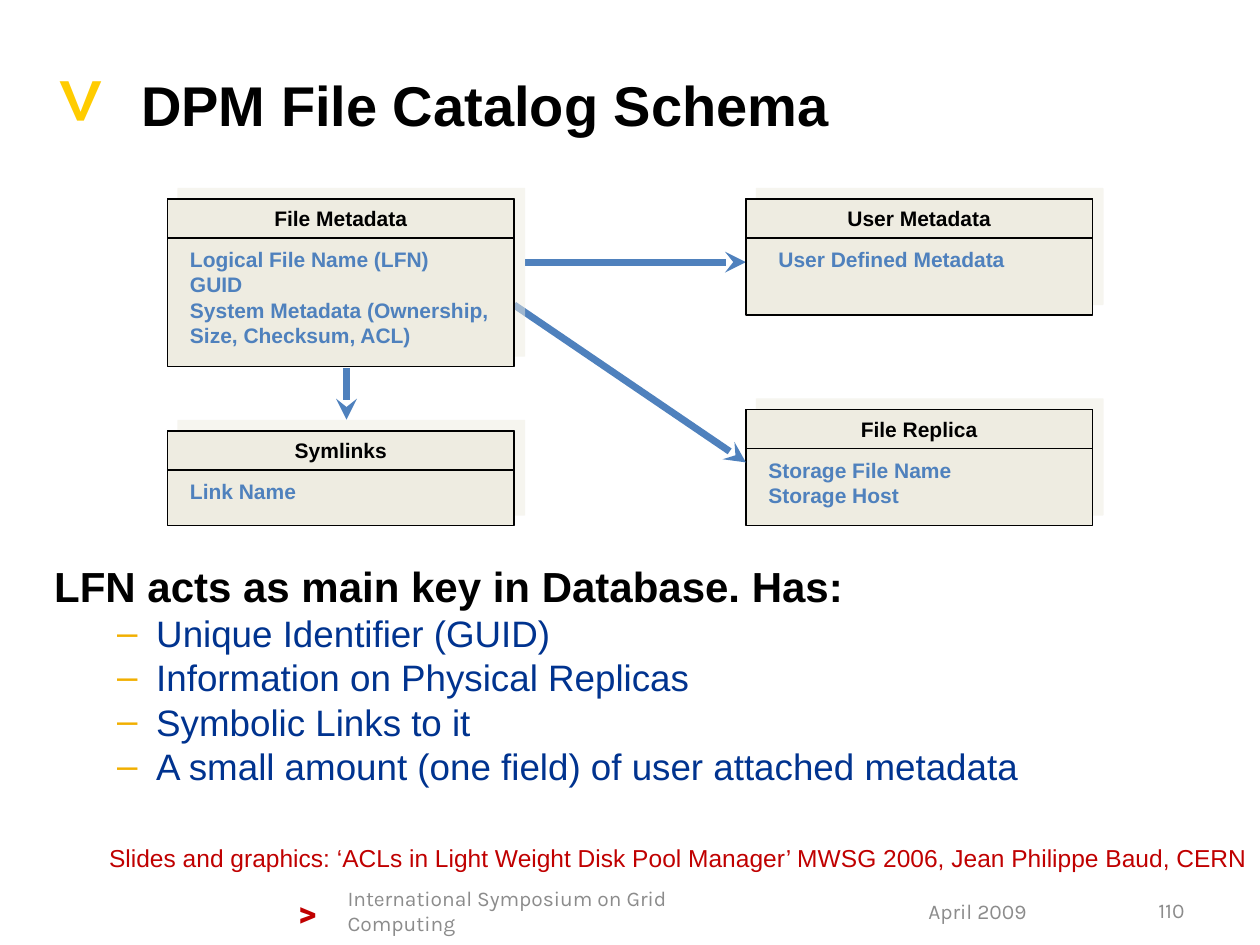
from dataclasses import dataclass

from lxml import etree
from pptx import Presentation
from pptx.dml.color import RGBColor
from pptx.enum.shapes import MSO_CONNECTOR, MSO_SHAPE
from pptx.enum.text import MSO_ANCHOR, MSO_AUTO_SIZE, PP_ALIGN
from pptx.oxml import parse_xml
from pptx.oxml.ns import nsdecls, qn
from pptx.util import Inches, Pt

LEFT, CENTER, RIGHT = PP_ALIGN.LEFT, PP_ALIGN.CENTER, PP_ALIGN.RIGHT
TOP, MIDDLE = MSO_ANCHOR.TOP, MSO_ANCHOR.MIDDLE
RECTANGLE = MSO_SHAPE.RECTANGLE
STRAIGHT = MSO_CONNECTOR.STRAIGHT
NO_AUTOFIT = MSO_AUTO_SIZE.NONE


@dataclass(frozen=True)
class Theme:
    font: str = "Arial"
    mark_font: str = "Roboto"
    footer_font: str = "Karla"
    black: str = "000000"
    card: str = "EEECE1"
    accent: str = "4F81BD"
    red: str = "C00000"
    yellow: str = "FFCC00"
    bullet: str = "F1AF00"
    navy: str = "00338F"
    gray: str = "8C8C8C"
    title_size: int = 32
    lead_size: int = 24
    item_size: int = 21
    credit_size: int = 14
    small_size: int = 12
    title_mark_size: int = 54
    footer_mark_size: int = 20


THEME = Theme()

TITLE = "DPM File Catalog Schema"
LEAD = "LFN acts as main key in Database. Has:"
ITEMS = [
    "Unique Identifier (GUID)",
    "Information on Physical Replicas",
    "Symbolic Links to it",
    "A small amount (one field) of user attached metadata",
]
CREDIT = ("Slides and graphics: ‘ACLs in Light Weight Disk Pool Manager’ "
          "MWSG 2006, Jean Philippe Baud, CERN")

COLUMNS = (1.33, 5.92)
CARD_WIDTH, HEADER_HEIGHT, FIELD_TOP = 2.75, 0.31, 0.33
# name, column, top, height, field indent, field width, fields
REPLICA_CARD = ("File Replica", 1, 3.25, 0.92, 0.08, 1.65,
                ["Storage File Name", "Storage Host"])
OTHER_CARDS = [
    ("Symlinks", 0, 3.42, 0.75, 0.08, 1.04, ["Link Name"]),
    ("File Metadata", 0, 1.58, 1.33, 0.08, 2.57,
     ["Logical File Name (LFN)", "GUID",
      "System Metadata (Ownership,", "Size, Checksum, ACL)"]),
    ("User Metadata", 1, 1.58, 0.92, 0.16, 1.99, ["User Defined Metadata"]),
]
ARROWS = [
    (4.17, 2.08, 5.92, 2.08),
    (2.75, 2.92, 2.75, 3.33),
    (4.08, 2.42, 5.92, 3.67),
]
FOOTERS = [
    ("110", (8.98, 7.11, 0.52, 0.23), RIGHT),
    ("April 2009", (7.27, 7.11, 1.17, 0.24), LEFT),
    ("International Symposium on Grid Computing", (2.66, 7.11, 3.59, 0.24), LEFT),
]


def color(value):
    return RGBColor.from_string(value)


def inches(values):
    return [Inches(value) for value in values]


def write(paragraph, text, size, tint, bold=False, font=THEME.font, align=LEFT):
    paragraph.alignment = align
    run = paragraph.add_run()
    run.text = text
    run.font.name, run.font.size, run.font.bold = font, Pt(size), bold
    run.font.color.rgb = color(tint)


def add_text(slide, text, box, size, tint, anchor=TOP, **style):
    shape = slide.shapes.add_textbox(*inches(box))
    frame = shape.text_frame
    frame.word_wrap, frame.vertical_anchor = True, anchor
    write(frame.paragraphs[0], text, size, tint, **style)
    return shape


def place(placeholder, box, anchor):
    placeholder.left, placeholder.top, placeholder.width, placeholder.height = inches(box)
    frame = placeholder.text_frame
    frame.auto_size, frame.vertical_anchor = NO_AUTOFIT, anchor
    return frame


def add_panel(slide, box):
    panel = slide.shapes.add_shape(RECTANGLE, *inches(box))
    panel.shadow.inherit = False
    panel.fill.solid()
    panel.fill.fore_color.rgb = color(THEME.card)
    panel.line.color.rgb = color(THEME.black)
    panel.line.width = Pt(0.75)
    return panel


def add_card_shadow(panel):
    effects = panel._element.spPr.find(qn("a:effectLst"))
    effects.append(parse_xml(
        f'<a:outerShdw {nsdecls("a")} dist="{Pt(8.5)}" dir="{315 * 60000}" '
        f'algn="ctr" rotWithShape="0"><a:srgbClr val="{THEME.card}">'
        '<a:alpha val="50000"/></a:srgbClr></a:outerShdw>'))


def add_card(slide, name, column, top, height, indent, field_width, fields):
    left = COLUMNS[column]
    add_card_shadow(add_panel(slide, (left, top, CARD_WIDTH, height)))
    header = add_panel(slide, (left, top, CARD_WIDTH, HEADER_HEIGHT))
    write(header.text_frame.paragraphs[0], name, THEME.small_size, THEME.black,
          bold=True, align=CENTER)
    field_box = slide.shapes.add_textbox(*inches(
        (left + indent, top + FIELD_TOP, field_width, 0.1 + 0.2 * len(fields))))
    field_box.fill.solid()
    field_box.fill.fore_color.rgb = color(THEME.card)
    frame = field_box.text_frame
    frame.word_wrap, frame.margin_right = True, 0
    for index, field in enumerate(fields):
        paragraph = frame.add_paragraph() if index else frame.paragraphs[0]
        write(paragraph, field, THEME.small_size, THEME.accent, bold=True)


def add_arrow(slide, ends):
    arrow = slide.shapes.add_connector(STRAIGHT, *inches(ends))
    arrow.line.color.rgb = color(THEME.accent)
    arrow.line.width = Pt(4)
    etree.SubElement(arrow.line._get_or_add_ln(), qn("a:tailEnd"), type="stealth")
    etree.SubElement(arrow._element.spPr, qn("a:effectLst"))


def set_bullet(paragraph, margin, hanging, symbol=None):
    properties = paragraph._p.get_or_add_pPr()
    properties.set("marL", str(Inches(margin)))
    properties.set("indent", str(Inches(-hanging)))
    if symbol is None:
        etree.SubElement(properties, qn("a:buNone"))
        return
    tint = etree.SubElement(properties, qn("a:buClr"))
    etree.SubElement(tint, qn("a:srgbClr"), val=THEME.bullet)
    etree.SubElement(properties, qn("a:buFont"), typeface=THEME.font)
    etree.SubElement(properties, qn("a:buChar"), char=symbol)


def fill_body(frame):
    lead = frame.paragraphs[0]
    set_bullet(lead, 0.38, 0.38)
    lead.space_before = Pt(0)
    write(lead, LEAD, THEME.lead_size, THEME.black, bold=True)
    for item in ITEMS:
        paragraph = frame.add_paragraph()
        paragraph.level = 1
        set_bullet(paragraph, 0.81, 0.31, "–")
        paragraph.space_before = Pt(0)
        write(paragraph, item, THEME.item_size, THEME.navy)


def main():
    presentation = Presentation()
    presentation.slide_width, presentation.slide_height = Inches(10), Inches(7.5)
    slide = presentation.slides.add_slide(presentation.slide_layouts[1])

    add_text(slide, ">", (2.27, 7.03, 0.47, 0.44), THEME.footer_mark_size, THEME.red,
             bold=True, font=THEME.mark_font)
    title_mark = add_text(slide, ">", (0.46, 0.23, 0.47, 1.01), THEME.title_mark_size,
                          THEME.yellow, font=THEME.mark_font)
    title_mark.rotation = 90

    title = place(slide.shapes.title, (1.02, 0.43, 7.73, 0.79), MIDDLE)
    write(title.paragraphs[0], TITLE, THEME.title_size, THEME.black, bold=True)
    fill_body(place(slide.placeholders[1], (0.33, 4.4, 9.42, 2.5), TOP))

    add_card(slide, *REPLICA_CARD)
    for ends in ARROWS:
        add_arrow(slide, ends)
    for card in OTHER_CARDS:
        add_card(slide, *card)

    add_text(slide, CREDIT, (0.55, 6.64, 9.45, 0.34), THEME.credit_size, THEME.red,
             align=RIGHT)
    for text, box, align in FOOTERS:
        add_text(slide, text, box, THEME.small_size, THEME.gray, anchor=MIDDLE,
                 font=THEME.footer_font, align=align)

    presentation.save("out.pptx")


if __name__ == "__main__":
    main()
